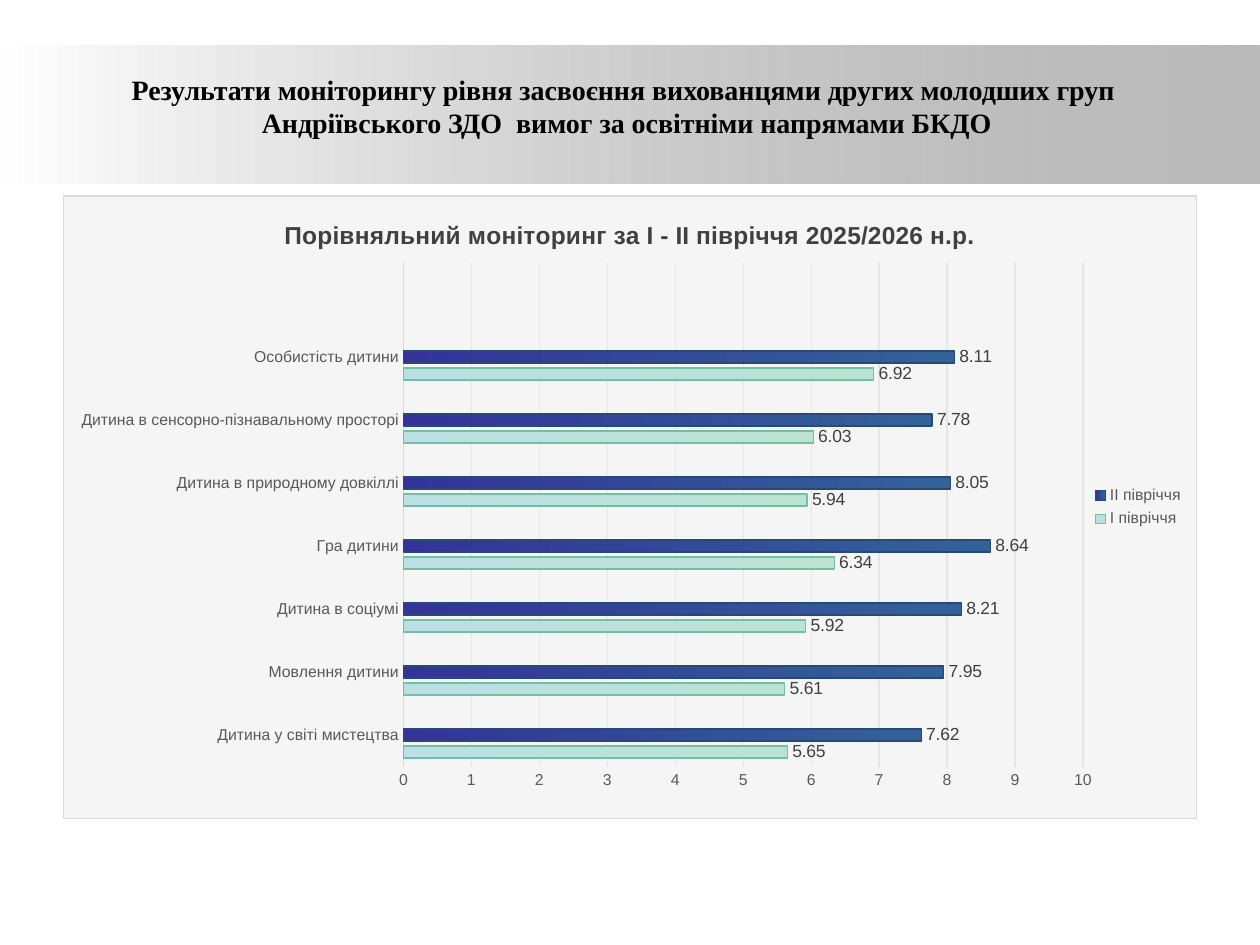
import pptx
import pptx.chart.data
import pptx.dml.color
import pptx.enum.chart
import pptx.enum.shapes
import pptx.enum.text
import pptx.oxml
import pptx.oxml.ns
import pptx.util
from pptx.util import Inches

SPACE = pptx.oxml.ns.nsdecls("c", "a")
FIND = pptx.oxml.ns.qn
CATS = ["Дитина у світі мистецтва", "Мовлення дитини", "Дитина в соціумі",
        "Гра дитини", "Дитина в природному довкіллі",
        "Дитина в сенсорно-пізнавальному просторі", "Особистість дитини", ""]
TERMS = [
    ("І півріччя", [5.65, 5.61, 5.92, 6.34, 5.94, 6.03, 6.92, None],
     ("BBE3D3", "BBE0E3"), "72BFA5"),
    ("ІІ півріччя", [7.62, 7.95, 8.21, 8.64, 8.05, 7.78, 8.11, None],
     ("336299", "333399"), "264A73"),
    ("Ряди 3", [None] * 8, ("FFFFFF", "FFFFFF"), "BFBFBF"),
]


def tint(code):
    return pptx.dml.color.RGBColor.from_string(code)


def style(font, size, code, name="Arial", bold=False):
    font.size = pptx.util.Pt(size)
    font.name = name
    font.bold = bold
    font.color.rgb = tint(code)


def blend(fill, codes, angle):
    fill.gradient()
    fill.gradient_angle = angle
    for stop, place, code in zip(fill.gradient_stops, (0, 1), codes):
        stop.position = place
        stop.color.rgb = tint(code)


def rule(line, code):
    line.color.rgb = tint(code)
    line.width = pptx.util.Pt(0.75)


def add_band(slide):
    band = slide.shapes.add_shape(
        pptx.enum.shapes.MSO_SHAPE.RECTANGLE,
        Inches(0), Inches(0.36), Inches(10), Inches(1.1))
    band.shadow.inherit = False
    band.line.fill.background()
    blend(band.fill, ("FFFFFF", "808080"), 0)
    grey = band.element.findall(".//" + FIND("a:srgbClr"))[-1]
    grey.append(pptx.oxml.parse_xml(f'<a:alpha {SPACE} val="54000"/>'))
    slide.shapes.title.element.addprevious(band.element)


def set_title(slide):
    title = slide.shapes.title
    title.left, title.top = Inches(0.5), Inches(0.13)
    title.width, title.height = Inches(8.95), Inches(1.42)
    frame = title.text_frame
    frame.text = ("Результати моніторингу рівня засвоєння вихованцями других "
                  "молодших груп \vАндріївського ЗДО  вимог за освітніми "
                  "напрямами БКДО")
    frame.word_wrap = True
    frame.vertical_anchor = pptx.enum.text.MSO_ANCHOR.MIDDLE
    para = frame.paragraphs[0]
    para.alignment = pptx.enum.text.PP_ALIGN.CENTER
    style(para.font, 16, "000000", "Times New Roman", True)


def set_axes(chart):
    kinds = pptx.enum.chart
    for axis in (chart.category_axis, chart.value_axis):
        axis.major_tick_mark = kinds.XL_TICK_MARK.NONE
        axis.minor_tick_mark = kinds.XL_TICK_MARK.NONE
        style(axis.tick_labels.font, 9, "595959")
    rule(chart.category_axis.format.line, "D9D9D9")
    value = chart.value_axis
    value.minimum_scale, value.maximum_scale = 0, 10
    value.major_unit = 1
    value.format.line.fill.background()
    rule(value.major_gridlines.format.line, "E6E6E6")


def set_bars(plot):
    plot.gap_width = 140
    plot.overlap = -40
    plot.vary_by_categories = False
    for bars, (_, _, codes, edge) in zip(plot.series, TERMS):
        blend(bars.format.fill, codes, 180)
        rule(bars.format.line, edge)
        labels = bars.data_labels
        labels.show_value = True
        labels.position = pptx.enum.chart.XL_LABEL_POSITION.OUTSIDE_END
        style(labels.font, 10, "404040")


def set_legend(chart):
    chart.has_legend = True
    legend = chart.legend
    legend.position = pptx.enum.chart.XL_LEGEND_POSITION.RIGHT
    legend.include_in_layout = False
    style(legend.font, 9, "595959")
    legend_xml = chart.element.find(".//" + FIND("c:legend"))
    legend_xml.find(FIND("c:legendPos")).addnext(pptx.oxml.parse_xml(
        f'<c:legendEntry {SPACE}><c:idx val="0"/><c:delete val="1"/>'
        '</c:legendEntry>'))


def set_frame(chart):
    chart.element.find(FIND("c:chart")).addnext(pptx.oxml.parse_xml(
        f'<c:spPr {SPACE}><a:solidFill><a:srgbClr val="F5F5F5"/></a:solidFill>'
        '<a:ln w="9525"><a:solidFill><a:srgbClr val="D9D9D9"/></a:solidFill>'
        '</a:ln></c:spPr>'))
    area = chart.element.find(".//" + FIND("c:plotArea"))
    for old in area.findall(FIND("c:layout")):
        area.remove(old)
    modes = "".join(f'<c:{side}Mode val="edge"/>' for side in "xy")
    sizes = "".join(f'<c:{side} val="{size}"/>' for side, size in
                    zip("xywh", (0.3, 0.107, 0.6, 0.81)))
    area.insert(0, pptx.oxml.parse_xml(
        f'<c:layout {SPACE}><c:manualLayout><c:layoutTarget val="inner"/>'
        f'{modes}{sizes}</c:manualLayout></c:layout>'))


def add_bars(slide):
    data = pptx.chart.data.CategoryChartData()
    data.categories = CATS
    for name, values, _, _ in TERMS:
        data.add_series(name, values)
    chart = slide.shapes.add_chart(
        pptx.enum.chart.XL_CHART_TYPE.BAR_CLUSTERED,
        Inches(0.5), Inches(1.55), Inches(9), Inches(4.95), data).chart
    style(chart.font, 10, "000000")
    chart.has_title = True
    frame = chart.chart_title.text_frame
    frame.text = "Порівняльний моніторинг за І - ІІ півріччя 2025/2026 н.р."
    style(frame.paragraphs[0].font, 14, "404040", bold=True)
    chart.chart_title.include_in_layout = False
    set_axes(chart)
    set_bars(chart.plots[0])
    set_legend(chart)
    set_frame(chart)


def main():
    deck = pptx.Presentation()
    deck.slide_width, deck.slide_height = Inches(10), Inches(7.5)
    slide = deck.slides.add_slide(deck.slide_layouts[5])
    set_title(slide)
    add_band(slide)
    add_bars(slide)
    deck.save("out.pptx")


if __name__ == "__main__":
    main()
